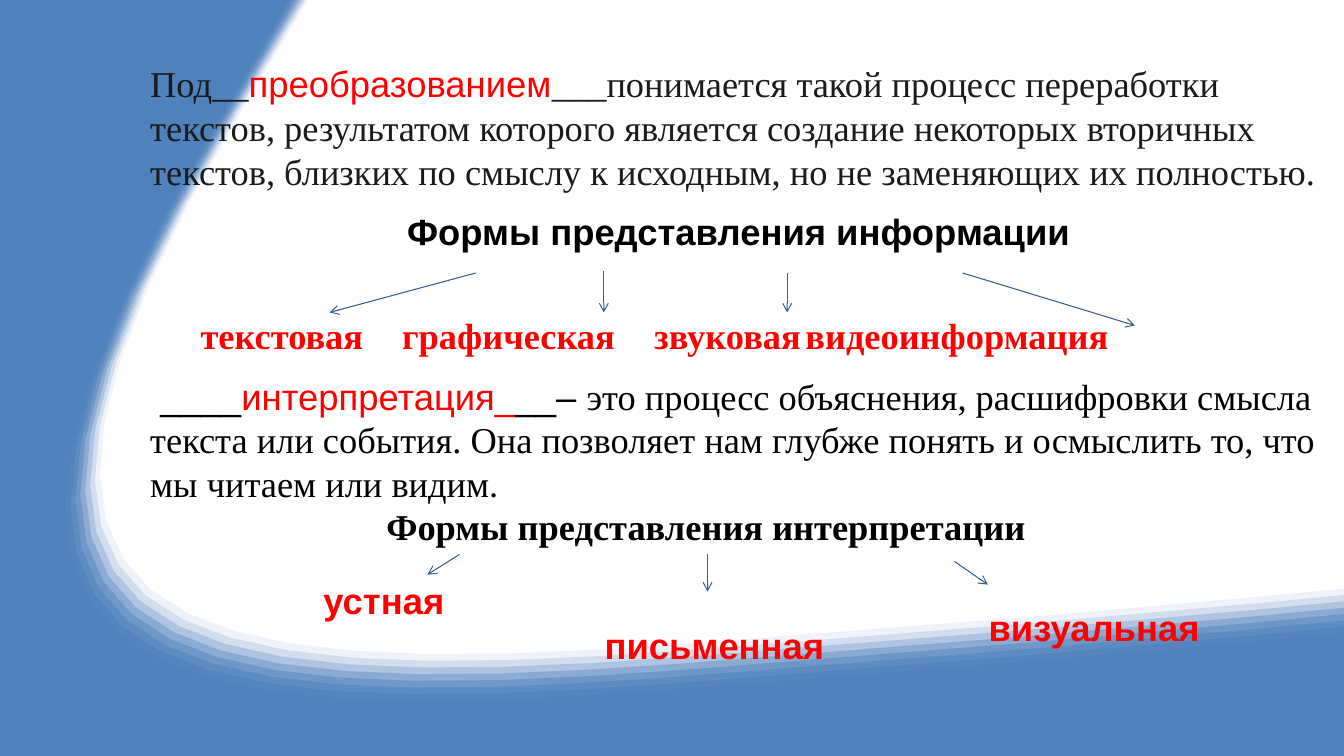
from dataclasses import dataclass

from lxml.etree import SubElement
from pptx import Presentation
from pptx.dml.color import RGBColor
from pptx.enum.shapes import MSO_CONNECTOR
from pptx.enum.text import MSO_ANCHOR, MSO_AUTO_SIZE, PP_ALIGN
from pptx.oxml.ns import qn
from pptx.util import Pt

Point = tuple[float, float]


@dataclass(frozen=True)
class Theme:
    wave: str = "4F81BD"
    arrow: str = "375D8B"
    answer: str = "FF0000"
    soft_black: str = "1A1A1A"
    black: str = "000000"
    serif: str = "Times New Roman"
    sans: str = "Arial"
    size: float = 26
    arrow_width: float = 0.75


@dataclass(frozen=True)
class Arrow:
    start: Point
    end: Point


@dataclass(frozen=True)
class FormLabel:
    text: str
    left: float
    top: float
    width: float
    height: float = 38.2


THEME = Theme()
WIDTH, HEIGHT = 960, 540
BAND_COUNT = 11
CURVE_STEPS = (2, 16, 3)  # line segments for each of an edge's three curves

# Edges of the wave, top to right: chained cubic curves sharing end points
WAVE_EDGE = [(190.8, 0), (190.8, 0), (172.8, 29.5), (141.1, 82.8), (-116.6, 512.6),
             (76.3, 543.6), (471.6, 514.1), (774, 491), (960, 472.3), (960, 472.3)]
FAINTEST_EDGE = [(220.3, 0), (219.6, 0.7), (202.3, 28.8), (172.8, 78.5), (-52.6, 455),
                 (115.9, 488.2), (496.8, 459.4), (781.2, 438.5), (958.3, 420.5), (960, 420.5)]
DENSEST_EDGE = [(199.4, 0), (195.1, 7.9), (178.6, 37.4), (151.9, 82.1), (-102.2, 506.2),
                (87.8, 536.4), (478.1, 506.9), (754.6, 486), (935.3, 468.7), (960, 465.8)]

ARROWS = [
    Arrow((339.8, 195), (235.4, 223.2)),
    Arrow((687.6, 195), (810.7, 232.5)),
    Arrow((328.3, 396), (305.3, 410.4)),
    Arrow((681.8, 401), (705.6, 417.6)),
    Arrow((431.3, 193.7), (431.3, 223.2)),
    Arrow((562.3, 195), (562.3, 223.2)),
    Arrow((505.4, 396), (505.4, 422.6)),
]
INTERPRETATION_FORMS = [
    FormLabel("визуальная", 699.1, 428.4, 167.8),
    FormLabel("письменная", 424.8, 441.4, 179.3),
    FormLabel("устная", 223.9, 409.7, 115.9),
]
# Each form of information with its tab stop
INFORMATION_FORMS = {"текстовая": 71.4, "графическая": 227.1,
                     "звуковая": 405, "видеоинформация": 549.3}


def mix(first: Point, second: Point, share: float) -> Point:
    return tuple(a + (b - a) * share for a, b in zip(first, second))


def trace(edge: list[Point]) -> list[Point]:
    """Turn chained cubic curves into a list of points."""
    points = [edge[0]]
    for curve, steps in enumerate(CURVE_STEPS):
        for step in range(1, steps + 1):
            hull = edge[3 * curve:3 * curve + 4]
            while len(hull) > 1:
                hull = [mix(a, b, step / steps) for a, b in zip(hull, hull[1:])]
            points.append(hull[0])
    return points


def add_wave_layer(slide, edge: list[Point], opacity: float = 1) -> None:
    """Fill everything below and left of the edge."""
    outline = trace(edge) + [(WIDTH, HEIGHT), (0, HEIGHT), (0, 0)]
    corners = [(Pt(x), Pt(y)) for x, y in outline]
    builder = slide.shapes.build_freeform(*corners[0])
    builder.add_line_segments(corners[1:], close=True)
    layer = builder.convert_to_shape()
    layer.shadow.inherit = False
    layer.line.fill.background()
    layer.fill.solid()
    layer.fill.fore_color.rgb = RGBColor.from_string(THEME.wave)
    if opacity < 1:
        color = layer.element.spPr.find(f".//{qn('a:srgbClr')}")
        SubElement(color, qn("a:alpha"), val=str(round(opacity * 100000)))


def add_arrow(slide, arrow: Arrow) -> None:
    ends = [Pt(value) for value in (*arrow.start, *arrow.end)]
    connector = slide.shapes.add_connector(MSO_CONNECTOR.STRAIGHT, *ends)
    connector.line.color.rgb = RGBColor.from_string(THEME.arrow)
    connector.line.width = Pt(THEME.arrow_width)
    properties = connector.element.spPr
    SubElement(properties.find(qn("a:ln")), qn("a:tailEnd"), type="arrow")
    SubElement(properties, qn("a:effectLst"))


def add_text(paragraph, text: str, *, font: str = THEME.serif,
             color: str = THEME.black, bold: bool = False) -> None:
    run = paragraph.add_run()
    run.text = text
    run.font.name = font
    run.font.size = Pt(THEME.size)
    run.font.bold = bold
    run.font.color.rgb = RGBColor.from_string(color)


def format_paragraph(paragraph, *, align=PP_ALIGN.LEFT, before: float = 0,
                     after: float = 0, indent: float = 0, tabs=()) -> None:
    paragraph.alignment = align
    paragraph.space_before, paragraph.space_after = Pt(before), Pt(after)
    properties = paragraph._p.get_or_add_pPr()
    properties.set("marL", str(Pt(indent)))
    properties.set("indent", "0")
    SubElement(properties, qn("a:buNone"))
    if tabs:
        stops = SubElement(properties, qn("a:tabLst"))
        for position in tabs:
            SubElement(stops, qn("a:tab"), pos=str(Pt(position)), algn="l")


def fill_body(frame) -> None:
    frame.word_wrap = True
    frame.auto_size = MSO_AUTO_SIZE.SHAPE_TO_FIT_TEXT
    frame.vertical_anchor = MSO_ANCHOR.TOP
    transformation = frame.paragraphs[0]
    information, forms, interpretation, closing = (frame.add_paragraph() for _ in range(4))

    format_paragraph(transformation)
    add_text(transformation, "Под__", color=THEME.soft_black)
    add_text(transformation, "преобразованием", font=THEME.sans, color=THEME.answer)
    add_text(transformation, "___понимается такой процесс переработки текстов, результатом "
             "которого является создание некоторых вторичных текстов, близких по смыслу "
             "к исходным, но не заменяющих их полностью.", color=THEME.soft_black)

    format_paragraph(information, align=PP_ALIGN.CENTER, before=12, after=12)
    add_text(information, "Формы представления информации", font=THEME.sans, bold=True)

    format_paragraph(forms, before=31.1, after=12, tabs=INFORMATION_FORMS.values())
    for form in INFORMATION_FORMS:
        add_text(forms, f"\t{form}", color=THEME.answer, bold=True)

    format_paragraph(interpretation)
    add_text(interpretation, " ____", font=THEME.sans)
    add_text(interpretation, "интерпретация_", font=THEME.sans, color=THEME.answer)
    add_text(interpretation, "__– ", font=THEME.sans)
    add_text(interpretation, "это процесс объяснения, расшифровки смысла текста или события. "
             "Она позволяет нам глубже понять и осмыслить то, что мы читаем или видим.")

    format_paragraph(closing, indent=168.6)
    add_text(closing, "Формы представления интерпретации", bold=True)


def main() -> None:
    presentation = Presentation()
    presentation.slide_width, presentation.slide_height = Pt(WIDTH), Pt(HEIGHT)
    slide = presentation.slides.add_slide(presentation.slide_layouts[1])
    title, body = slide.placeholders
    title.element.getparent().remove(title.element)

    # Wave with its fading bands
    add_wave_layer(slide, WAVE_EDGE)
    for band in range(BAND_COUNT):
        share = band / (BAND_COUNT - 1)
        edge = [mix(a, b, share) for a, b in zip(FAINTEST_EDGE, DENSEST_EDGE)]
        add_wave_layer(slide, edge, (band + 1) / BAND_COUNT)

    # Definitions, in front of the wave
    body.element.getparent().append(body.element)
    body.left, body.top, body.width, body.height = Pt(100.1), Pt(40.3), Pt(855.4), Pt(355.7)
    fill_body(body.text_frame)

    # Arrows and forms of interpretation
    for arrow in ARROWS:
        add_arrow(slide, arrow)
    for form in INTERPRETATION_FORMS:
        label = slide.shapes.add_textbox(Pt(form.left), Pt(form.top), Pt(form.width), Pt(form.height))
        label.text_frame.word_wrap = True
        label.text_frame.auto_size = MSO_AUTO_SIZE.SHAPE_TO_FIT_TEXT
        add_text(label.text_frame.paragraphs[0], form.text,
                 font=THEME.sans, color=THEME.answer, bold=True)

    presentation.save("out.pptx")


if __name__ == "__main__":
    main()
